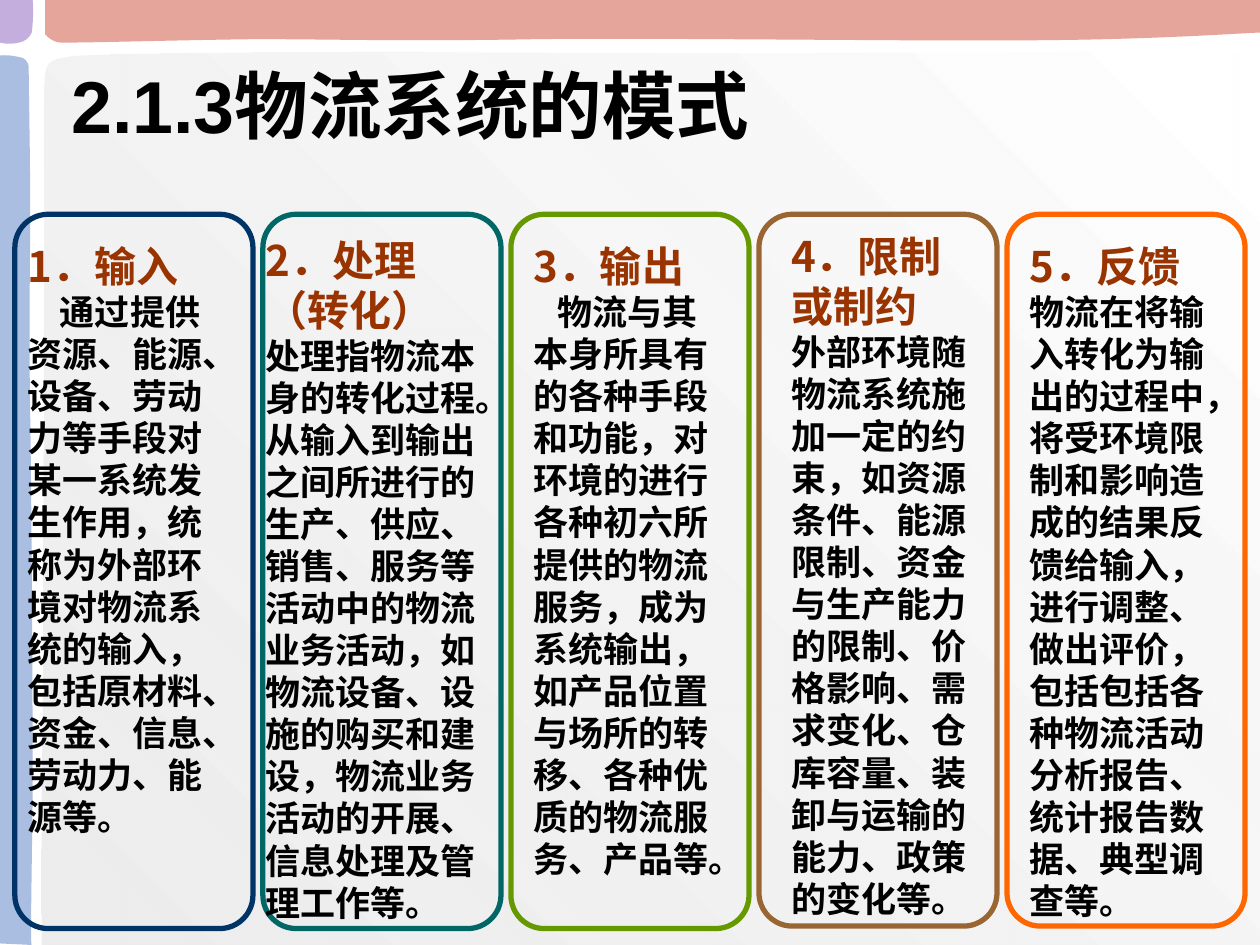
from dataclasses import dataclass

from lxml.etree import SubElement
from pptx import Presentation
from pptx.dml.color import RGBColor
from pptx.enum.shapes import MSO_SHAPE
from pptx.enum.text import MSO_ANCHOR
from pptx.oxml.ns import qn
from pptx.util import Cm, Pt


@dataclass(frozen=True)
class Theme:
    latin_font: str = "Arial"
    chinese_font: str = "Noto Sans CJK SC"
    title_size: float = 42
    heading_size: float = 24
    body_size: float = 20
    heading_spacing: float = 28.5
    body_spacing: float = 24
    ink: str = "000000"
    heading: str = "993300"
    panel: tuple = ("E6E6E6", "FFFFFF")
    top_band: str = "DA7F70"
    left_band: str = "85A3D5"
    corner: str = "AC8CD0"
    columns: tuple = ("003366", "006666", "669900", "996633", "FF6600")
    opacity: int = 70


# Outlines in cm: a start point, then line ends (x, y) or curves (control, control, end).
PANEL = [
    (25.4, 19.05), (25.4, 1.07), (22.5, 0.97, 21.72, 1.07, 19.3, 1.07),
    (16.92, 1.07, 13.97, 1.09, 11, 1.07), (8.03, 1.04, 3.12, 1.04, 1.45, 1.14),
    (0.91, 1.22, 0.91, 1.24, 0.89, 1.85), (0.86, 2.44, 0.89, 2.79, 0.89, 4.62),
    (0.89, 6.5, 0.86, 10.46, 0.86, 12.85), (0.86, 15.27, 0.81, 16.81, 0.84, 19.05),
    (13.13, 19.05, 25.4, 19.05, 25.4, 19.05),
]
TOP_BAND = [
    (25.4, 0), (25.4, 0.66), (25.43, 0.64, 23.57, 0.79, 21.13, 0.81),
    (18.69, 0.84, 13.49, 0.76, 10.82, 0.79), (8.15, 0.84, 6.73, 0.79, 5.16, 0.79),
    (3.56, 0.81, 1.96, 0.86, 1.24, 0.86), (1.04, 0.86, 0.91, 0.69, 0.91, 0.69),
    (0.91, 0.69, 0.91, 0.36, 0.91, 0), (25.4, 0),
]
LEFT_BAND = [
    (0, 19.02), (0.64, 19.05), (0.61, 19.08, 0.64, 17.73, 0.66, 15.95),
    (0.66, 14.17, 0.64, 10.34, 0.61, 8.38), (0.58, 6.45, 0.61, 5.38, 0.61, 4.24),
    (0.61, 3.07, 0.58, 1.9, 0.58, 1.37), (0.58, 1.22, 0.46, 1.17, 0.46, 1.17),
    (0.18, 1.09, 0, 1.12, 0, 1.12), (0, 19.02),
]
CORNER = [
    (0, 0), (0.66, 0), (0.69, 0.3, 0.64, 0.66, 0.64, 0.66),
    (0.58, 0.79, 0.48, 0.84, 0.38, 0.86), (0.18, 0.91, 0, 0.86, 0, 0.86), (0, 0),
]

COLUMN_LEFT, COLUMN_TOP, COLUMN_PITCH, COLUMN_WIDTH = 0.3, 4.32, 5.0, 4.8

# Frame height, text box (left, top, width, height), headings, first-line indent, body.
COLUMNS = [
    (14.4, (0.3, 4.72, 4.6, 13.13), ["1．输入"], 0.66,
     "通过提供资源、能源、设备、劳动力等手段对某一系统发生作用，统称为外部环境对物流系统的输入，"
     "包括原材料、资金、信息、劳动力、能源等。"),
    (14.4, (5.1, 4.6, 5.0, 14.15), ["2．处理", "（转化）"], 0,
     "处理指物流本身的转化过程。从输入到输出之间所进行的生产、供应、销售、服务等活动中的物流业务活动，"
     "如物流设备、设施的购买和建设，物流业务活动的开展、信息处理及管理工作等。"),
    (14.4, (10.5, 4.72, 4.4, 13.97), ["3．输出"], 0.48,
     "物流与其本身所具有的各种手段和功能，对环境的进行各种初六所提供的物流服务，成为系统输出，"
     "如产品位置与场所的转移、各种优质的物流服务、产品等。"),
    (14.35, (15.7, 4.52, 4.2, 14.15), ["4．限制或制约"], 0,
     "外部环境随物流系统施加一定的约束，如资源条件、能源限制、资金与生产能力的限制、价格影响、"
     "需求变化、仓库容量、装卸与运输的能力、政策的变化等。"),
    (14.35, (20.5, 4.72, 4.2, 13.97), ["5．反馈"], 0,
     "物流在将输入转化为输出的过程中，将受环境限制和影响造成的结果反馈给输入，进行调整、做出评价，"
     "包括包括各种物流活动分析报告、统计报告数据、典型调查等。"),
]


def curve_lines(shape, outline):
    """Join the three straight steps of each curve segment into one cubic curve."""
    lines = iter(list(shape.element.spPr.iter(qn("a:lnTo"))))
    for segment in outline[1:]:
        first = next(lines)
        if len(segment) == 6:
            first.tag = qn("a:cubicBezTo")
            for line in (next(lines), next(lines)):
                first.append(line[0])
                line.getparent().remove(line)


class SlideBuilder:
    def __init__(self, slide, theme):
        self.slide = slide
        self.theme = theme

    def background_shape(self, outline, *colors):
        """Draw a translucent outline: one colour is solid, two make a gradient."""
        start, *points = [(Cm(segment[i]), Cm(segment[i + 1]))
                          for segment in outline for i in range(0, len(segment), 2)]
        builder = self.slide.shapes.build_freeform(*start, scale=1.0)
        builder.add_line_segments(points, close=True)
        shape = builder.convert_to_shape()
        curve_lines(shape, outline)
        shape.shadow.inherit = False
        shape.line.fill.background()
        if len(colors) == 1:
            shape.fill.solid()
            shape.fill.fore_color.rgb = RGBColor.from_string(colors[0])
        else:
            shape.fill.gradient()
            shape.fill.gradient_angle = 45
            for stop, color in zip(shape.fill.gradient_stops, colors):
                stop.color.rgb = RGBColor.from_string(color)
        first_color = next(shape.element.spPr.iter(qn("a:srgbClr")))
        SubElement(first_color, qn("a:alpha"), val=str(self.theme.opacity * 1000))

    def run(self, paragraph, text, size, color, latin_font):
        run = paragraph.add_run()
        run.text = text
        run.font.size = Pt(size)
        run.font.bold = True
        run.font.name = latin_font
        run.font.color.rgb = RGBColor.from_string(color)
        SubElement(run.font._element, qn("a:ea"), typeface=self.theme.chinese_font)

    def text_box(self, shapes, box):
        frame = shapes.add_textbox(*map(Cm, box)).text_frame
        frame.word_wrap = True
        return frame

    def title(self, text, box):
        frame = self.text_box(self.slide.shapes, box)
        frame.vertical_anchor = MSO_ANCHOR.MIDDLE
        self.run(frame.paragraphs[0], text, self.theme.title_size,
                 self.theme.ink, self.theme.latin_font)

    def frame(self, shapes, box, color):
        shape = shapes.add_shape(MSO_SHAPE.ROUNDED_RECTANGLE, *map(Cm, box))
        shape.adjustments[0] = 0.14
        shape.shadow.inherit = False
        shape.fill.background()
        shape.line.color.rgb = RGBColor.from_string(color)
        shape.line.width = Pt(3)

    def column(self, frame_box, color, text_box, headings, indent, body):
        theme = self.theme
        shapes = self.slide.shapes.add_group_shape().shapes
        self.frame(shapes, frame_box, color)
        text_frame = self.text_box(shapes, text_box)
        text_frame.margin_top = Cm(0.14)
        paragraph = text_frame.paragraphs[0]
        for heading in headings:
            paragraph.line_spacing = Pt(theme.heading_spacing)
            self.run(paragraph, heading, theme.heading_size, theme.heading, theme.chinese_font)
            paragraph = text_frame.add_paragraph()
        paragraph.line_spacing = Pt(theme.body_spacing)
        if indent:
            paragraph._p.get_or_add_pPr().set("indent", str(Cm(indent)))
        self.run(paragraph, body, theme.body_size, theme.ink, theme.chinese_font)


def main():
    presentation = Presentation()
    presentation.slide_width, presentation.slide_height = Cm(25.4), Cm(19.05)
    slide = presentation.slides.add_slide(presentation.slide_layouts[6])
    theme = Theme()
    builder = SlideBuilder(slide, theme)

    builder.background_shape(PANEL, *theme.panel)
    builder.background_shape(TOP_BAND, theme.top_band)
    builder.background_shape(LEFT_BAND, theme.left_band)
    builder.background_shape(CORNER, theme.corner)
    builder.title("2.1.3物流系统的模式", (1.19, 0.79, 18.7, 2.62))
    for index, (height, *content) in enumerate(COLUMNS):
        left = COLUMN_LEFT + index * COLUMN_PITCH
        builder.column((left, COLUMN_TOP, COLUMN_WIDTH, height), theme.columns[index], *content)

    presentation.save("out.pptx")


if __name__ == "__main__":
    main()
